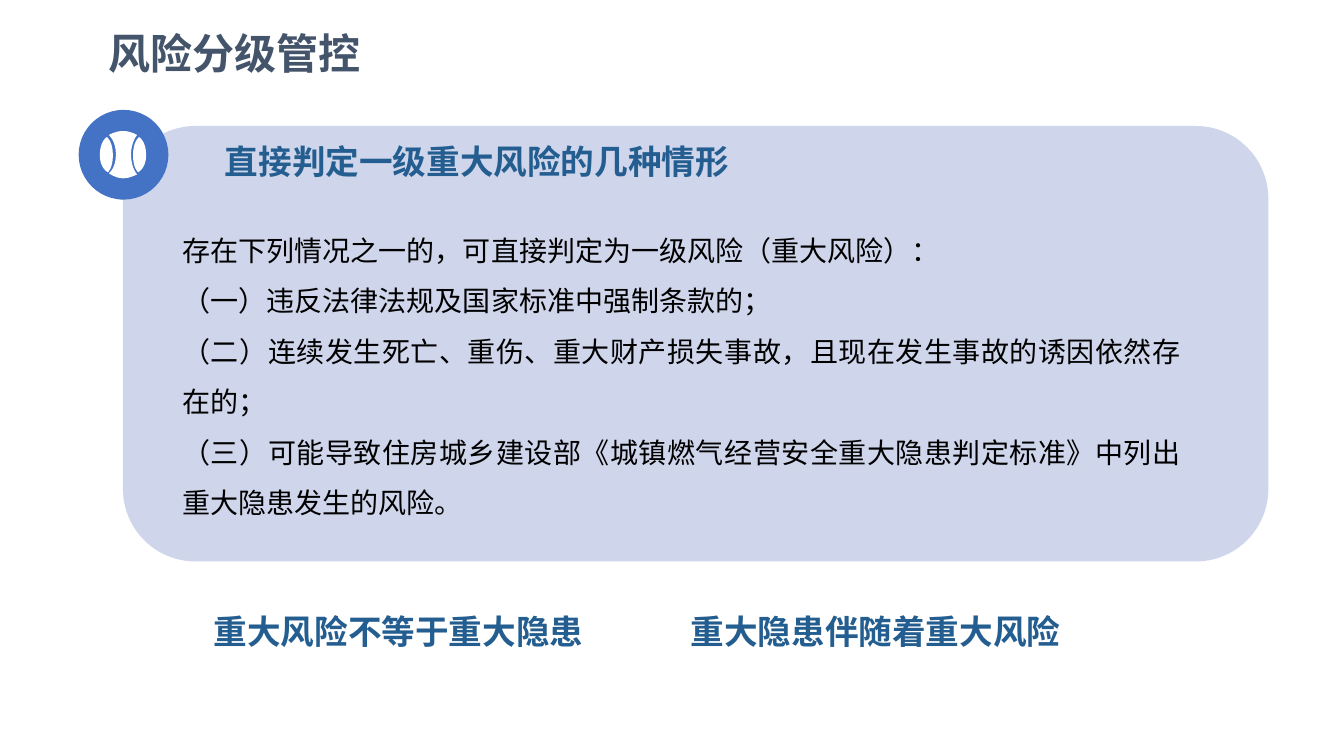
"""Build the slide on risk classification and direct grade-one judgements."""
from pptx import Presentation
from pptx.dml.color import RGBColor
from pptx.enum.shapes import MSO_SHAPE
from pptx.enum.text import MSO_ANCHOR, PP_ALIGN
from pptx.oxml.ns import qn
from pptx.util import Inches, Pt
from lxml.etree import SubElement

COLORS = {"panel": "CFD5EA", "badge": "4472C4", "ball": "FFFFFF",
          "heading": "245E90", "body": "000000", "title": "44546A"}
CJK = "Noto Sans CJK SC"


def paint(s, color):
    s.shadow.inherit = False
    s.fill.solid()
    s.fill.fore_color.rgb = RGBColor.from_string(COLORS[color])
    s.line.fill.background()


prs = Presentation()
prs.slide_width, prs.slide_height = Inches(13.33), Inches(7.5)
slide = prs.slides.add_slide(prs.slide_layouts[6])

for kind, color, box in [
    (MSO_SHAPE.ROUNDED_RECTANGLE, "panel", (1.22, 1.25, 11.36, 4.32)),
    (MSO_SHAPE.OVAL, "badge", (0.78, 1.09, 0.89, 0.89)),
]:
    s = slide.shapes.add_shape(kind, *[Inches(v) for v in box])
    paint(s, color)

middle = [(1.3, 1.53), (1.3, 1.41), (1.36, 1.34), (1.36, 1.34),
          (1.36, 1.34), (1.3, 1.3), (1.22, 1.3), (1.14, 1.3), (1.08, 1.34), (1.08, 1.34),
          (1.08, 1.34), (1.15, 1.4), (1.15, 1.53), (1.15, 1.67), (1.08, 1.72), (1.08, 1.72),
          (1.08, 1.72), (1.15, 1.77), (1.22, 1.77), (1.29, 1.77), (1.36, 1.73), (1.36, 1.73),
          (1.36, 1.73), (1.3, 1.67), (1.3, 1.53)]
left = [(1.06, 1.36), (1.06, 1.36), (0.99, 1.4), (0.99, 1.54),
        (0.99, 1.67), (1.07, 1.71), (1.07, 1.71), (1.07, 1.71), (1.12, 1.67), (1.12, 1.54),
        (1.12, 1.4), (1.06, 1.36), (1.06, 1.36)]
right = [(2.44 - x, y) for x, y in left]
outlines = [[(Inches(x), Inches(y)) for x, y in part] for part in (middle, left, right)]
builder = slide.shapes.build_freeform(*outlines[0][0])
builder.add_line_segments(outlines[0][1:])
for outline in outlines[1:]:
    builder.move_to(*outline[0])
    builder.add_line_segments(outline[1:])
ball = builder.convert_to_shape()
paint(ball, "ball")
segments = list(ball._element.iter(qn("a:lnTo")))
for first, second, third in zip(segments[::3], segments[1::3], segments[2::3]):
    first.tag = qn("a:cubicBezTo")
    for segment in (second, third):
        first.append(segment[0])
        segment.getparent().remove(segment)

HEADING = {"size": Pt(24), "bold": True, "name": CJK}
BODY = {"size": Pt(20), "name": "Arial"}
TITLE = {"size": Pt(30), "bold": True, "name": CJK}
MARGINS = (0.12, 0.06, 0.12, 0.06)
MIDDLE, TOP = MSO_ANCHOR.MIDDLE, MSO_ANCHOR.TOP
LEFT, JUSTIFY = PP_ALIGN.LEFT, PP_ALIGN.JUSTIFY

texts = [
    ((2.11, 1.25, 8.97, 0.62), MARGINS, MIDDLE, LEFT, 1.2, HEADING, "heading",
     ["直接判定一级重大风险的几种情形"]),
    ((1.69, 2.09, 10.14, 3.19), MARGINS, TOP, JUSTIFY, 1.5, BODY, "body",
     ["存在下列情况之一的，可直接判定为一级风险（重大风险）：",
      "（一）违反法律法规及国家标准中强制条款的；",
      "（二）连续发生死亡、重伤、重大财产损失事故，且现在发生事故的诱因依然存在的；",
      "（三）可能导致住房城乡建设部《城镇燃气经营安全重大隐患判定标准》中列出重大隐患发生的风险。"]),
    ((0.94, -0.08, 12.29, 1), (0.14, 0.14, 0.06, 0.14), MIDDLE, LEFT, 1.4, TITLE, "title",
     ["风险分级管控"]),
    ((2, 5.91, 9.57, 0.62), MARGINS, MIDDLE, LEFT, 1.2, HEADING, "heading",
     ["重大风险不等于重大隐患\t重大隐患伴随着重大风险"]),
]
for box, margins, anchor, align, spacing, style, color, lines in texts:
    tf = slide.shapes.add_textbox(*[Inches(v) for v in box]).text_frame
    tf.word_wrap = True
    tf.vertical_anchor = anchor
    for side, margin in zip(("left", "top", "right", "bottom"), margins):
        setattr(tf, f"margin_{side}", Inches(margin))
    for i, line in enumerate(lines):
        p = tf.add_paragraph() if i else tf.paragraphs[0]
        p.alignment = align
        p.line_spacing = spacing
        if "\t" in line:
            tabs = SubElement(p._p.get_or_add_pPr(), qn("a:tabLst"))
            SubElement(tabs, qn("a:tab"), pos=str(Inches(4.73)), algn="l")
        r = p.add_run()
        r.text = line
        for key, value in style.items():
            setattr(r.font, key, value)
        r.font.color.rgb = RGBColor.from_string(COLORS[color])
        SubElement(r._r.get_or_add_rPr(), qn("a:ea"), typeface=CJK)

prs.save("out.pptx")
